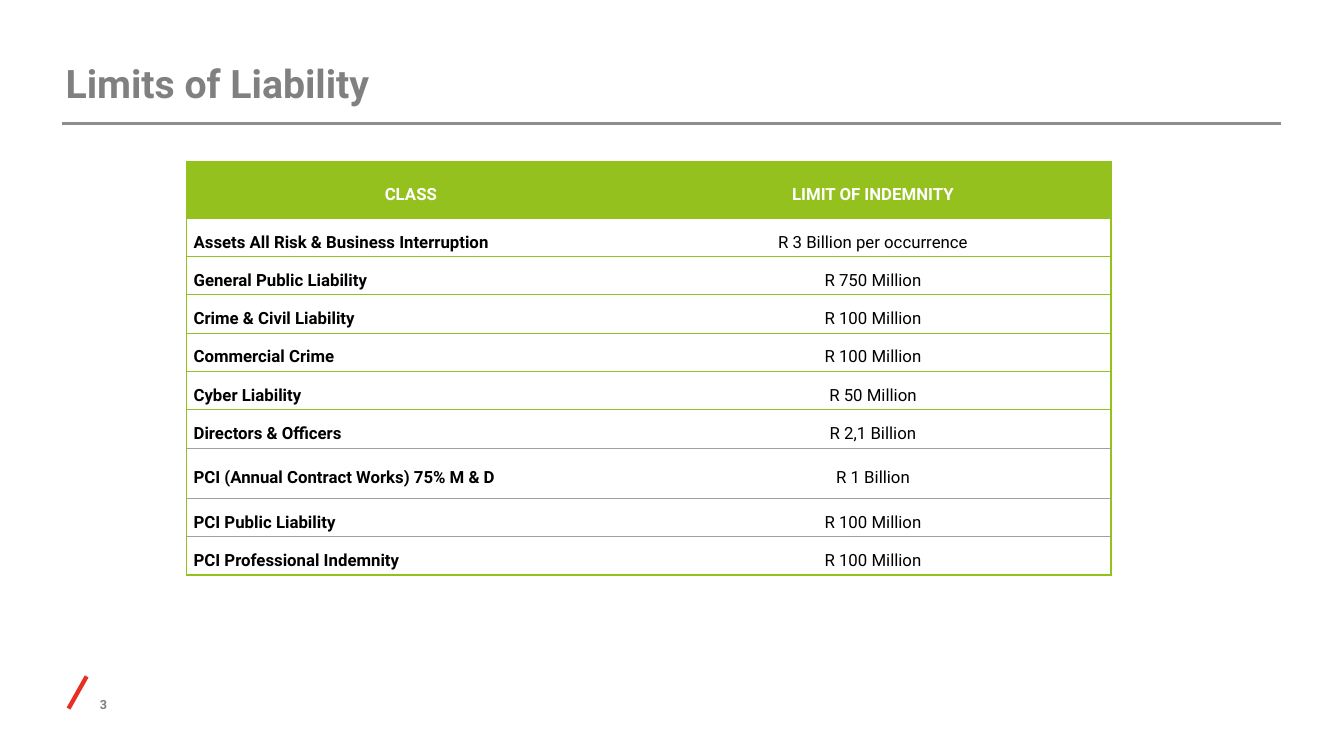
import pptx
import pptx.util
import pptx.dml.color
import pptx.enum.shapes
import pptx.enum.text
import pptx.oxml
import pptx.oxml.ns
import lxml.etree

Align = pptx.enum.text.PP_ALIGN
Anchor = pptx.enum.text.MSO_ANCHOR
Color = pptx.dml.color.RGBColor.from_string

theme = {
    "font": "Roboto",
    "grey": "808080", "rule": "8B8E91", "red": "E73023", "green": "95C11F",
    "hairline": "A0A0A0", "white": "FFFFFF", "black": "000000",
    "title": 28, "body": 12, "number": 9,
}

deck = pptx.Presentation()
deck.slide_width = pptx.util.Inches(13.33)
deck.slide_height = pptx.util.Inches(7.5)
page = deck.slides.add_slide(deck.slide_layouts[5])


def shares(*percents):
    sides = (deck.slide_width, deck.slide_height) * 2
    return [round(side * percent / 100) for side, percent in zip(sides, percents)]


def write(frame, text, size, color, bold, align):
    para = frame.paragraphs[0]
    para.alignment = align
    span = para.add_run()
    span.text = text
    look = {"name": theme["font"], "size": pptx.util.Pt(theme[size]), "bold": bold}
    for name, value in look.items():
        setattr(span.font, name, value)
    span.font.color.rgb = Color(theme[color])
    return para


number = page.shapes.add_textbox(*shares(3.68, 91.73, 4.28, 3.07))
title = page.shapes.title
title.left, title.top, title.width, title.height = shares(4.88, 4.53, 75, 9.6)
for box, inset in ((number, 0.05), (title, 0)):
    layout = {
        "margin_left": 0, "margin_top": 0, "margin_right": 0,
        "margin_bottom": pptx.util.Inches(inset),
        "vertical_anchor": Anchor.BOTTOM, "word_wrap": True,
        "auto_size": pptx.enum.text.MSO_AUTO_SIZE.NONE,
    }
    for name, value in layout.items():
        setattr(box.text_frame, name, value)
write(number.text_frame, "3", "number", "grey", True, Align.RIGHT)
write(title.text_frame, "Limits of Liability", "title", "grey", True, Align.LEFT)

for ends, color, weight in (
    ((4.65, 16.35, 95.33, 16.35), "rule", 2.25),
    ((5.1, 93.73, 6.45, 89.47), "red", 3.05),
):
    stroke = page.shapes.add_connector(
        pptx.enum.shapes.MSO_CONNECTOR.STRAIGHT, *shares(*ends))
    stroke.line.color.rgb = Color(theme[color])
    stroke.line.width = pptx.util.Pt(weight)
    lxml.etree.SubElement(stroke._element.spPr, pptx.oxml.ns.qn("a:effectLst"))

limits = [
    ("CLASS", "LIMIT OF INDEMNITY"),
    ("Assets All Risk & Business Interruption", "R 3 Billion per occurrence"),
    ("General Public Liability", "R 750 Million"),
    ("Crime & Civil Liability", "R 100 Million"),
    ("Commercial Crime", "R 100 Million"),
    ("Cyber Liability", "R 50 Million"),
    ("Directors & Officers", "R 2,1 Billion"),
    ("PCI (Annual Contract Works) 75% M & D", "R 1 Billion"),
    ("PCI Public Liability", "R 100 Million"),
    ("PCI Professional Indemnity", "R 100 Million"),
]
row_shares = [7.54] + [5.07] * 6 + [6.67] + [5.07] * 2
column_shares = [33.38, 35.4]
green_edge, grey_edge = (theme["green"], 1), (theme["hairline"], 0.5)
edges = [green_edge] * 7 + [grey_edge] * 3 + [green_edge]

table = page.shapes.add_table(
    len(limits), 2,
    *shares(13.88, 21.33, sum(column_shares), sum(row_shares))).table
table.horz_banding = False
for column, share in zip(table.columns, column_shares):
    column.width = round(deck.slide_width * share / 100)

for index, texts in enumerate(limits):
    table.rows[index].height = round(deck.slide_height * row_shares[index] / 100)
    header = index == 0
    for side, text in enumerate(texts):
        cell = table.cell(index, side)
        layout = {
            "margin_left": pptx.util.Inches(0.07), "margin_right": pptx.util.Inches(0.07),
            "margin_top": 0, "margin_bottom": 0, "vertical_anchor": Anchor.MIDDLE,
        }
        for name, value in layout.items():
            setattr(cell, name, value)
        borders = {
            "lnL": None if side else green_edge,
            "lnR": green_edge if side else None,
            "lnT": edges[index],
            "lnB": edges[index + 1],
        }
        properties = cell._tc.get_or_add_tcPr()
        for tag, edge in borders.items():
            line = lxml.etree.SubElement(properties, pptx.oxml.ns.qn("a:" + tag))
            if edge is None:
                lxml.etree.SubElement(line, pptx.oxml.ns.qn("a:noFill"))
                continue
            line.set("w", str(pptx.util.Pt(edge[1])))
            paint = lxml.etree.SubElement(line, pptx.oxml.ns.qn("a:solidFill"))
            lxml.etree.SubElement(paint, pptx.oxml.ns.qn("a:srgbClr"), val=edge[0])
        cell.fill.solid()
        cell.fill.fore_color.rgb = Color(theme["green" if header else "white"])
        para = write(
            cell.text_frame, text, "body", "white" if header else "black",
            header or side == 0, Align.CENTER if header or side else Align.LEFT)
        para.line_spacing = 1.5

deck.save("out.pptx")
